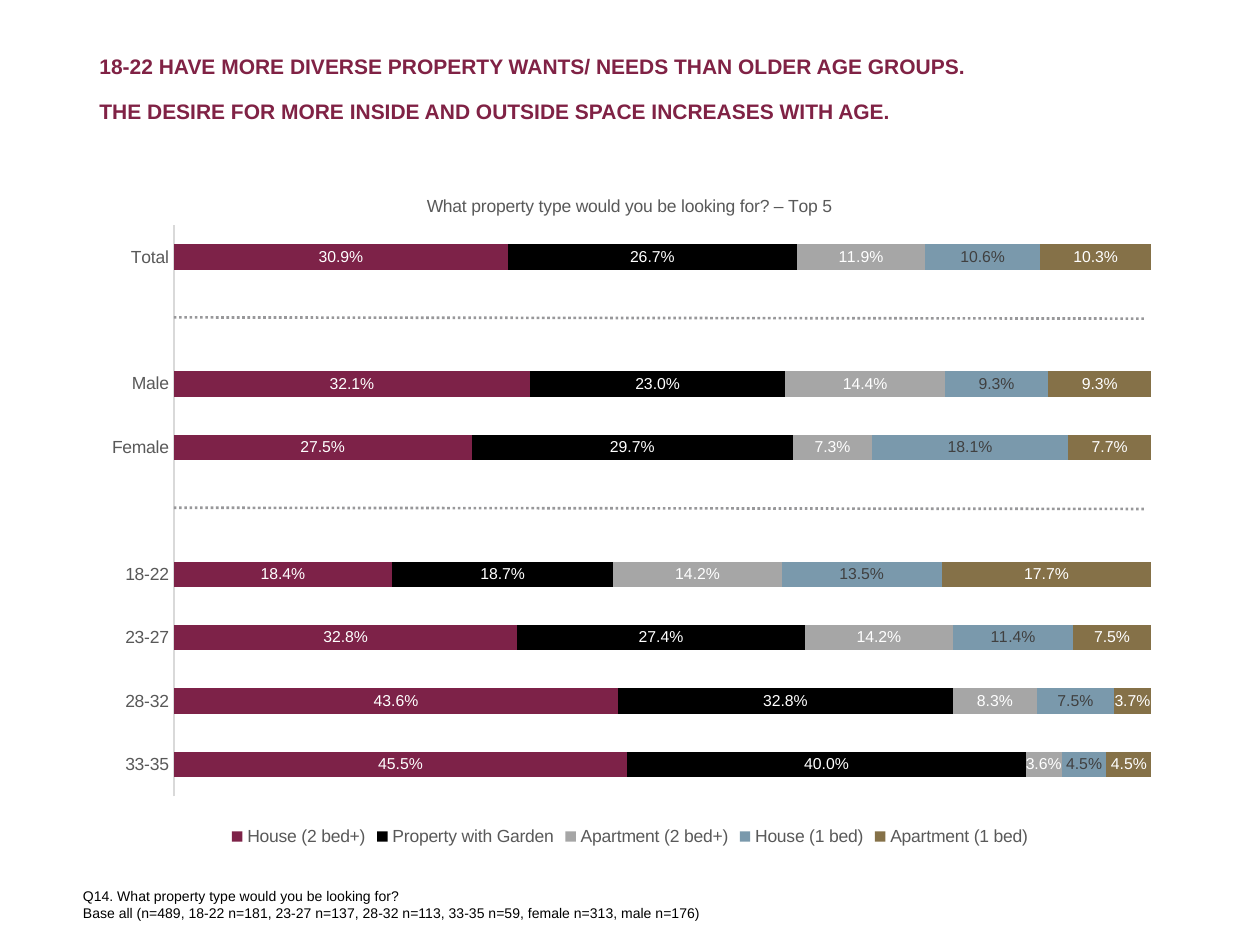
from lxml import etree
from pptx import Presentation
from pptx.chart.data import CategoryChartData
from pptx.dml.color import RGBColor
from pptx.enum.chart import XL_CHART_TYPE, XL_LABEL_POSITION, XL_LEGEND_POSITION, XL_TICK_MARK
from pptx.enum.dml import MSO_LINE
from pptx.enum.shapes import MSO_CONNECTOR
from pptx.enum.text import MSO_ANCHOR
from pptx.oxml import parse_xml
from pptx.oxml.ns import nsdecls, qn
from pptx.util import Inches, Pt

STACKED = XL_CHART_TYPE.BAR_STACKED_100
CENTER = XL_LABEL_POSITION.CENTER
BOTTOM = XL_LEGEND_POSITION.BOTTOM
NO_TICK = XL_TICK_MARK.NONE
DOTTED = MSO_LINE.ROUND_DOT
STRAIGHT = MSO_CONNECTOR.STRAIGHT
MIDDLE, TOP = MSO_ANCHOR.MIDDLE, MSO_ANCHOR.TOP

WINE = RGBColor(0x80, 0x22, 0x45)
PLUM = RGBColor(0x7D, 0x22, 0x48)
BLACK = RGBColor(0, 0, 0)
WHITE = RGBColor(255, 255, 255)
SILVER = RGBColor(0xA6, 0xA6, 0xA6)
BLUE = RGBColor(0x7A, 0x99, 0xAC)
OLIVE = RGBColor(0x85, 0x71, 0x48)
DARK = RGBColor(0x40, 0x40, 0x40)
GREY = RGBColor(0x59, 0x59, 0x59)
PALE = RGBColor(0xD9, 0xD9, 0xD9)
DOT = RGBColor(0x98, 0x98, 0x9A)

WIDE, HIGH = Inches(10), Inches(7.5)

HEAD = ["18-22 HAVE MORE DIVERSE PROPERTY WANTS/ NEEDS THAN OLDER AGE GROUPS.",
        "THE DESIRE FOR MORE INSIDE AND OUTSIDE SPACE INCREASES WITH AGE."]
NOTE = ["Q14. What property type would you be looking for?",
        "Base all (n=489, 18-22 n=181, 23-27 n=137, 28-32 n=113, 33-35 n=59, "
        "female n=313, male n=176)"]
ASK = "What property type would you be looking for? – Top 5"

# Groups run from the bottom bar up; a blank one leaves a gap
GROUPS = ["33-35", "28-32", "23-27", "18-22", "", "Female", "Male", "", "Total"]
SERIES = [
    ("House (2 bed+)", PLUM, WHITE,
     [.455, .436, .328, .184, None, .275, .321, None, .309]),
    ("Property with Garden", BLACK, WHITE,
     [.4, .328, .274, .187, None, .297, .23, None, .267]),
    ("Apartment (2 bed+)", SILVER, WHITE,
     [.036, .083, .142, .142, None, .073, .144, None, .119]),
    ("House (1 bed)", BLUE, DARK,
     [.045, .075, .114, .135, None, .181, .093, None, .106]),
    ("Apartment (1 bed)", OLIVE, WHITE,
     [.045, .037, .075, .177, None, .077, .093, None, .103]),
]

# Inner plot and title spot as shares of the chart
PLOT = {"x": .08, "y": .09, "w": .9, "h": .83}
SPOT = {"x": .31, "y": .04}


def scale(box):
    """Turn shares of the slide into lengths."""
    x, y, w, h = box
    return int(x * WIDE), int(y * HIGH), int(w * WIDE), int(h * HIGH)


def style(font, size, color, bold=False):
    look = {"name": "Arial", "size": Pt(size), "bold": bold}
    for key, value in look.items():
        setattr(font, key, value)
    font.color.rgb = color


def add_text(slide, box, lines, size, color, bold=False, wrap=True,
             anchor=TOP, gap=0, pitch=1.0):
    frame = slide.shapes.add_textbox(*scale(box)).text_frame
    frame.word_wrap = wrap
    frame.vertical_anchor = anchor
    for i, line in enumerate(lines):
        para = frame.paragraphs[0] if i == 0 else frame.add_paragraph()
        para.line_spacing = pitch
        para.space_before = Pt(gap if i else 0)
        run = para.add_run()
        run.text = line
        style(run.font, size, color, bold)


def set_layout(part, shares, inner=False):
    """Fix a chart part at shares of the chart area."""
    items = {"layoutTarget": "inner"} if inner else {}
    items |= {"xMode": "edge", "yMode": "edge"} | shares
    node = parse_xml(f"<c:layout {nsdecls('c')}><c:manualLayout/></c:layout>")
    for key, value in items.items():
        etree.SubElement(node[0], qn(f"c:{key}")).set("val", str(value))
    old = part.find(qn("c:layout"))
    if old is not None:
        part.remove(old)
    part.insert(1 if part.find(qn("c:tx")) is not None else 0, node)


def add_bars(slide, box):
    data = CategoryChartData(number_format="0.0%")
    data.categories = GROUPS
    for name, _, _, values in SERIES:
        data.add_series(name, values)
    chart = slide.shapes.add_chart(STACKED, *scale(box), data).chart
    style(chart.font, 10, GREY)

    # Title and legend
    chart.has_title = True
    frame = chart.chart_title.text_frame
    frame.text = ASK
    style(frame.paragraphs[0].runs[0].font, 10, GREY)
    chart.chart_title.include_in_layout = False
    chart.has_legend = True
    chart.legend.position = BOTTOM
    chart.legend.include_in_layout = False
    style(chart.legend.font, 10, GREY)

    # Axes
    axis = chart.category_axis
    axis.major_tick_mark = axis.minor_tick_mark = NO_TICK
    style(axis.tick_labels.font, 10, GREY)
    axis.format.line.color.rgb = PALE
    axis.format.line.width = Pt(.75)
    scores = chart.value_axis
    scores.minimum_scale, scores.maximum_scale = 0, 1
    scores.has_major_gridlines = False
    scores.visible = False

    # Bars and their labels
    plot = chart.plots[0]
    plot.gap_width, plot.overlap = 150, 100
    plot.vary_by_categories = False
    for series, (_, fill, ink, _) in zip(plot.series, SERIES):
        series.format.fill.solid()
        series.format.fill.fore_color.rgb = fill
        labels = series.data_labels
        look = {"show_value": True, "position": CENTER,
                "number_format": "0.0%", "number_format_is_linked": False}
        for key, value in look.items():
            setattr(labels, key, value)
        style(labels.font, 9, ink)

    root = chart.element.chart
    set_layout(root.find(qn("c:title")), SPOT)
    set_layout(root.plotArea, PLOT, inner=True)


def add_rules(slide, box, rows):
    """Dotted lines across the plot, placed by bar row."""
    x, y, w, h = scale(box)
    left, right = x + w * PLOT["x"], x + w * (PLOT["x"] + PLOT["w"])
    step = h * PLOT["h"] / len(GROUPS)
    for row in rows:
        top = int(y + h * PLOT["y"] + row * step)
        rule = slide.shapes.add_connector(
            STRAIGHT, int(left), top, int(right - w * .005), top + Inches(.01))
        rule.line.color.rgb = DOT
        rule.line.width = Pt(1.5)
        rule.line.dash_style = DOTTED
        etree.SubElement(rule.element.spPr, qn("a:effectLst"))


def main():
    deck = Presentation()
    deck.slide_width, deck.slide_height = WIDE, HIGH
    slide = deck.slides.add_slide(deck.slide_layouts[6])
    body = (.069, .173, .862, .728)
    add_text(slide, (.069, .053, .862, .085), HEAD, 12, WINE, bold=True,
             anchor=MIDDLE, gap=13, pitch=.9)
    add_text(slide, (.056, .933, .517, .049), NOTE, 8, BLACK, wrap=False)
    add_bars(slide, body)
    add_rules(slide, body, (1.45, 4.45))
    deck.save("out.pptx")


if __name__ == "__main__":
    main()
